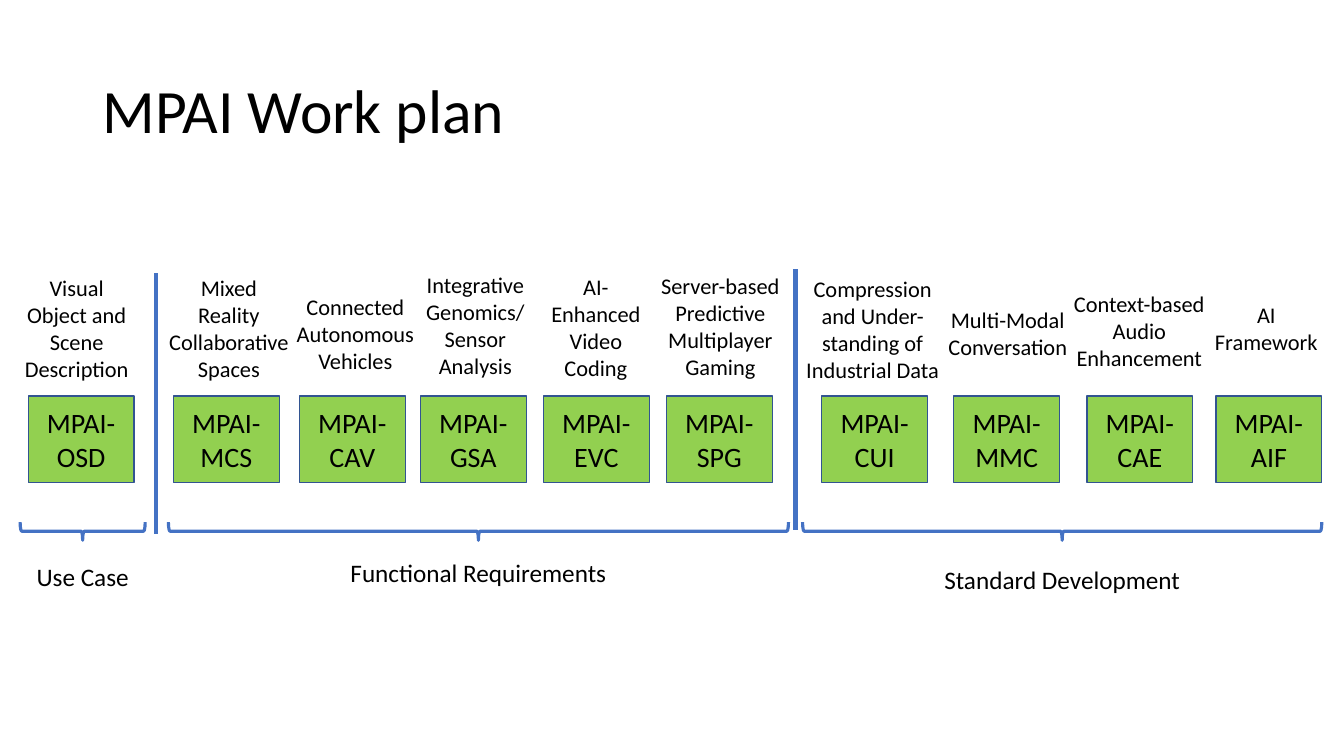
from dataclasses import dataclass

from lxml.etree import SubElement
from pptx import Presentation
from pptx.dml.color import RGBColor
from pptx.enum.shapes import MSO_CONNECTOR, MSO_SHAPE
from pptx.enum.text import MSO_ANCHOR, PP_ALIGN
from pptx.oxml.ns import qn
from pptx.util import Inches, Pt

BLACK = RGBColor(0x00, 0x00, 0x00)
GREEN = RGBColor(0x92, 0xD0, 0x50)
BLUE = RGBColor(0x44, 0x72, 0xC4)
DARK_BLUE = RGBColor(0x32, 0x54, 0x91)
FONT = "Calibri"

STAGE_TOP = 2.67
BOX_DROP, BOX_WIDTH, BOX_HEIGHT = 1.26, 1.05, 0.86
BRACE_DROP, BRACE_DEPTH = 2.6, 0.18
DIVIDER_HEIGHT = 2.59


@dataclass
class Standard:
    """A coded box and its label; offsets run from the stage's top left corner."""
    code: str
    label: str
    box_left: float
    label_left: float
    label_drop: float
    label_width: float


@dataclass
class Stage:
    name: str
    left: float
    width: float
    name_drop: float
    standards: list


STAGES = [
    Stage("Use Case", 0.2, 1.24, 2.85, [
        Standard("OSD", "Visual Object and Scene Description", 0.08, -0.1, 0, 1.32),
    ]),
    Stage("Functional Requirements", 1.67, 6.15, 2.81, [
        Standard("MCS", "Mixed Reality Collaborative Spaces", 0.05, -0.1, 0, 1.4),
        Standard("CAV", "Connected Autonomous Vehicles", 1.3, 1.14, 0.19, 1.43),
        Standard("GSA", "Integrative Genomics/ Sensor Analysis", 2.5, 2.26, -0.03, 1.57),
        Standard("EVC", "AI-Enhanced\nVideo Coding", 3.72, 3.58, -0.01, 1.32),
        Standard("SPG", "Server-based Predictive Multiplayer Gaming", 4.94, 4.69, -0.02, 1.57),
    ]),
    Stage("Standard Development", 7.96, 5.15, 2.88, [
        Standard("CUI", "Compression and Under-standing of\nIndustrial Data",
                 0.19, -0.09, 0.01, 1.57),
        Standard("MMC", "Multi-Modal Conversation", 1.5, 1.29, 0.32, 1.49),
        Standard("CAE", "Context-based Audio Enhancement", 2.82, 2.59, 0.16, 1.5),
        Standard("AIF", "AI Framework", 4.1, 3.95, 0.27, 1.3),
    ]),
]
DIVIDERS = [(1.55, 2.71), (7.89, 2.67)]


def write_text(shape, text, size, alignment=PP_ALIGN.CENTER):
    shape.text_frame.text = text
    for paragraph in shape.text_frame.paragraphs:
        paragraph.alignment = alignment
        paragraph.font.name = FONT
        paragraph.font.size = Pt(size)
        paragraph.font.color.rgb = BLACK


def add_label(slide, text, size, left, top, width, height, wrap=True):
    label = slide.shapes.add_textbox(Inches(left), Inches(top), Inches(width), Inches(height))
    write_text(label, text, size)
    label.text_frame.word_wrap = wrap


def add_title(slide):
    title = slide.shapes.title
    title.left, title.top = Inches(0.92), Inches(0.4)
    title.width, title.height = Inches(11.5), Inches(1.45)
    write_text(title, "MPAI Work plan", 44, PP_ALIGN.LEFT)
    title.text_frame.vertical_anchor = MSO_ANCHOR.MIDDLE
    title.text_frame.paragraphs[0].line_spacing = 0.9


def add_standard(slide, standard, left, top):
    box = slide.shapes.add_shape(
        MSO_SHAPE.RECTANGLE, Inches(left + standard.box_left), Inches(top + BOX_DROP),
        Inches(BOX_WIDTH), Inches(BOX_HEIGHT))
    box.shadow.inherit = False
    box.fill.solid()
    box.fill.fore_color.rgb = GREEN
    box.line.color.rgb = DARK_BLUE
    box.line.width = Pt(1)
    write_text(box, f"MPAI-{standard.code}", 20)
    box.text_frame.vertical_anchor = MSO_ANCHOR.MIDDLE
    add_label(slide, standard.label, 16, left + standard.label_left,
              top + standard.label_drop, standard.label_width, 1.13)


def add_brace(slide, left, middle, width):
    """Lay a left brace on its side so that it spans width and points down."""
    brace = slide.shapes.add_shape(
        MSO_SHAPE.LEFT_BRACE, Inches(left + (width - BRACE_DEPTH) / 2),
        Inches(middle - width / 2), Inches(BRACE_DEPTH), Inches(width))
    brace.rotation = 270
    brace.shadow.inherit = False
    brace.fill.background()
    brace.line.color.rgb = BLUE
    brace.line.width = Pt(2.25)


def add_stage(slide, stage, top):
    for standard in stage.standards:
        add_standard(slide, standard, stage.left, top)
    add_brace(slide, stage.left, top + BRACE_DROP, stage.width)
    add_label(slide, stage.name, 18, stage.left, top + stage.name_drop,
              stage.width, 0.4, wrap=False)


def add_divider(slide, left, top):
    divider = slide.shapes.add_connector(
        MSO_CONNECTOR.STRAIGHT, Inches(left), Inches(top),
        Inches(left), Inches(top + DIVIDER_HEIGHT))
    divider.line.color.rgb = BLUE
    divider.line.width = Pt(3)
    SubElement(divider._element.spPr, qn("a:effectLst"))


def main():
    presentation = Presentation()
    presentation.slide_width = Inches(13.33)
    presentation.slide_height = Inches(7.5)
    slide = presentation.slides.add_slide(presentation.slide_layouts[5])
    add_title(slide)
    for stage in STAGES:
        add_stage(slide, stage, STAGE_TOP)
    for left, top in DIVIDERS:
        add_divider(slide, left, top)
    presentation.save("out.pptx")


if __name__ == "__main__":
    main()
